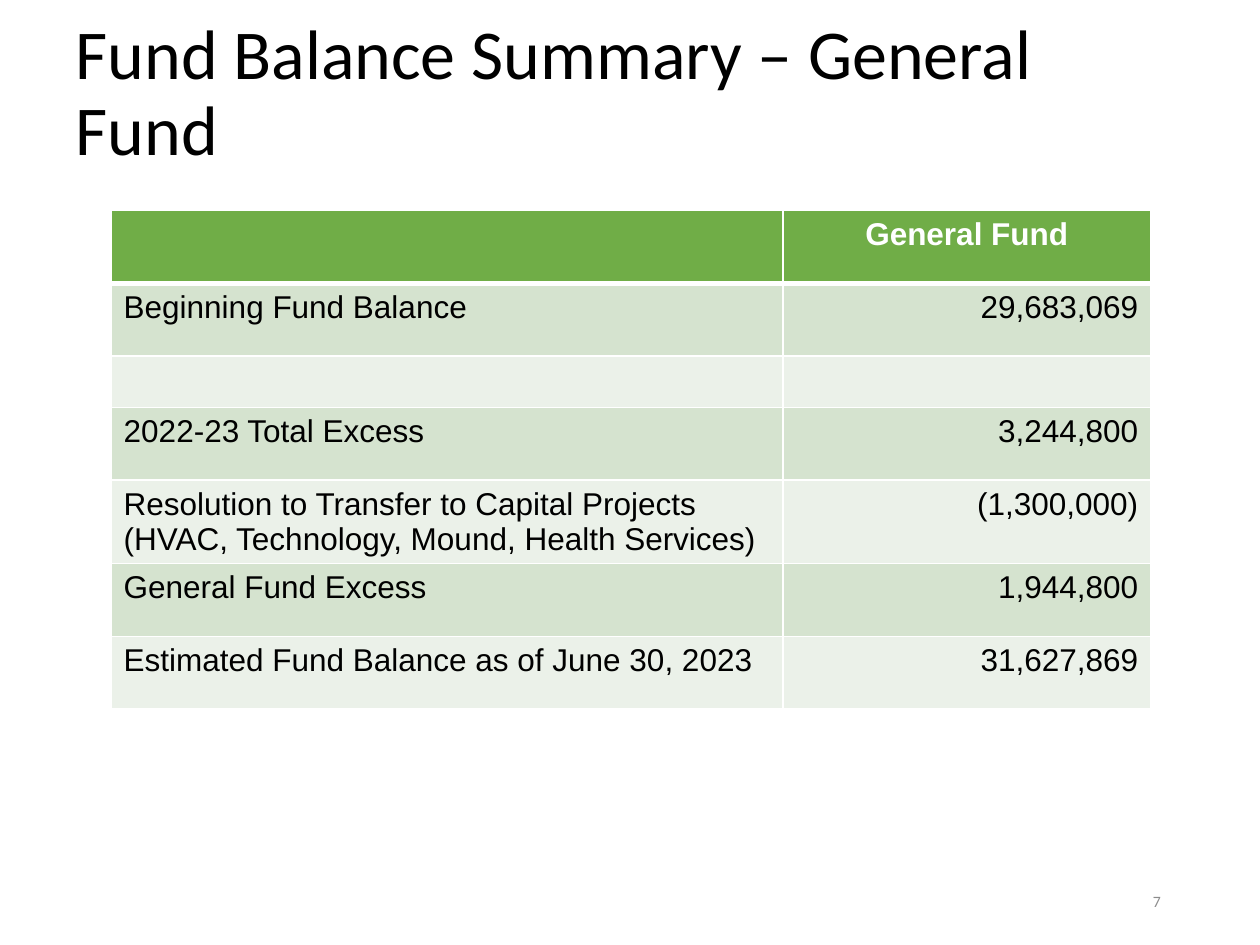
from lxml.etree import SubElement
from pptx import Presentation
from pptx.dml.color import RGBColor
from pptx.enum.text import MSO_ANCHOR as Anchor, PP_ALIGN as Align
from pptx.oxml.ns import qn
from pptx.util import Cm, Pt


def write(tf, text, size=18, font="Arial", color="000000", bold=False, align=Align.LEFT):
    p = tf.paragraphs[0]
    p.alignment = align
    p.font.size = Pt(size)
    if text:
        r = p.add_run()
        r.text = text
        r.font.size, r.font.name, r.font.bold = Pt(size), font, bold
        r.font.color.rgb = RGBColor.from_string(color)
    return p


def format_cell(cell, fill, bottom=1):
    # Borders must come before the fill in the cell properties
    tcPr = cell._tc.get_or_add_tcPr()
    for tag, width in (("a:lnL", 1), ("a:lnR", 1), ("a:lnT", 1), ("a:lnB", bottom)):
        ln = SubElement(tcPr, qn(tag), w=str(Pt(width)))
        SubElement(SubElement(ln, qn("a:solidFill")), qn("a:srgbClr"), val="FFFFFF")
    cell.fill.solid()
    cell.fill.fore_color.rgb = RGBColor.from_string(fill)


prs = Presentation()
prs.slide_width, prs.slide_height = Cm(25.4), Cm(19.05)
s = prs.slides.add_slide(prs.slide_layouts[5])

# Title
sp = s.shapes.title
sp.left, sp.top, sp.width, sp.height = Cm(1.27), Cm(0.64), Cm(22.86), Cm(2.54)
tf = sp.text_frame
tf.word_wrap = True
tf.vertical_anchor = Anchor.MIDDLE
p = write(tf, "Fund Balance Summary – General Fund", size=40, font="Calibri")
p.line_spacing = 0.9

# Fund balance table
rows = [
    ("", "General Fund"),
    ("Beginning Fund Balance", "29,683,069"),
    ("", ""),
    ("2022-23 Total Excess", "3,244,800"),
    ("Resolution to Transfer to Capital Projects (HVAC, Technology, Mound, Health Services)",
     "(1,300,000)"),
    ("General Fund Excess", "1,944,800"),
    ("Estimated Fund Balance as of June 30, 2023", "31,627,869"),
]
table = s.shapes.add_table(len(rows), 2, Cm(2.24), Cm(4.24), Cm(20.96), Cm(9.66)).table
for column, width in zip(table.columns, (13.54, 7.42)):
    column.width = Cm(width)
for i, row in enumerate(rows):
    table.rows[i].height = Cm(1.47 if any(row) else 0.84)
    for j, text in enumerate(row):
        cell = table.cell(i, j)
        if i == 0:
            format_cell(cell, "70AD47", bottom=3)
            write(cell.text_frame, text, color="FFFFFF", bold=True, align=Align.CENTER)
        else:
            format_cell(cell, "D5E3CF" if i % 2 else "EBF1E9")
            write(cell.text_frame, text, align=Align.RIGHT if j else Align.LEFT)

# Page number
tf = s.shapes.add_textbox(Cm(17.93), Cm(17.65), Cm(5.72), Cm(1.02)).text_frame
tf.word_wrap = True
tf.vertical_anchor = Anchor.MIDDLE
write(tf, "7", size=9, font="Calibri", color="8C8C8C", align=Align.RIGHT)

prs.save("out.pptx")
